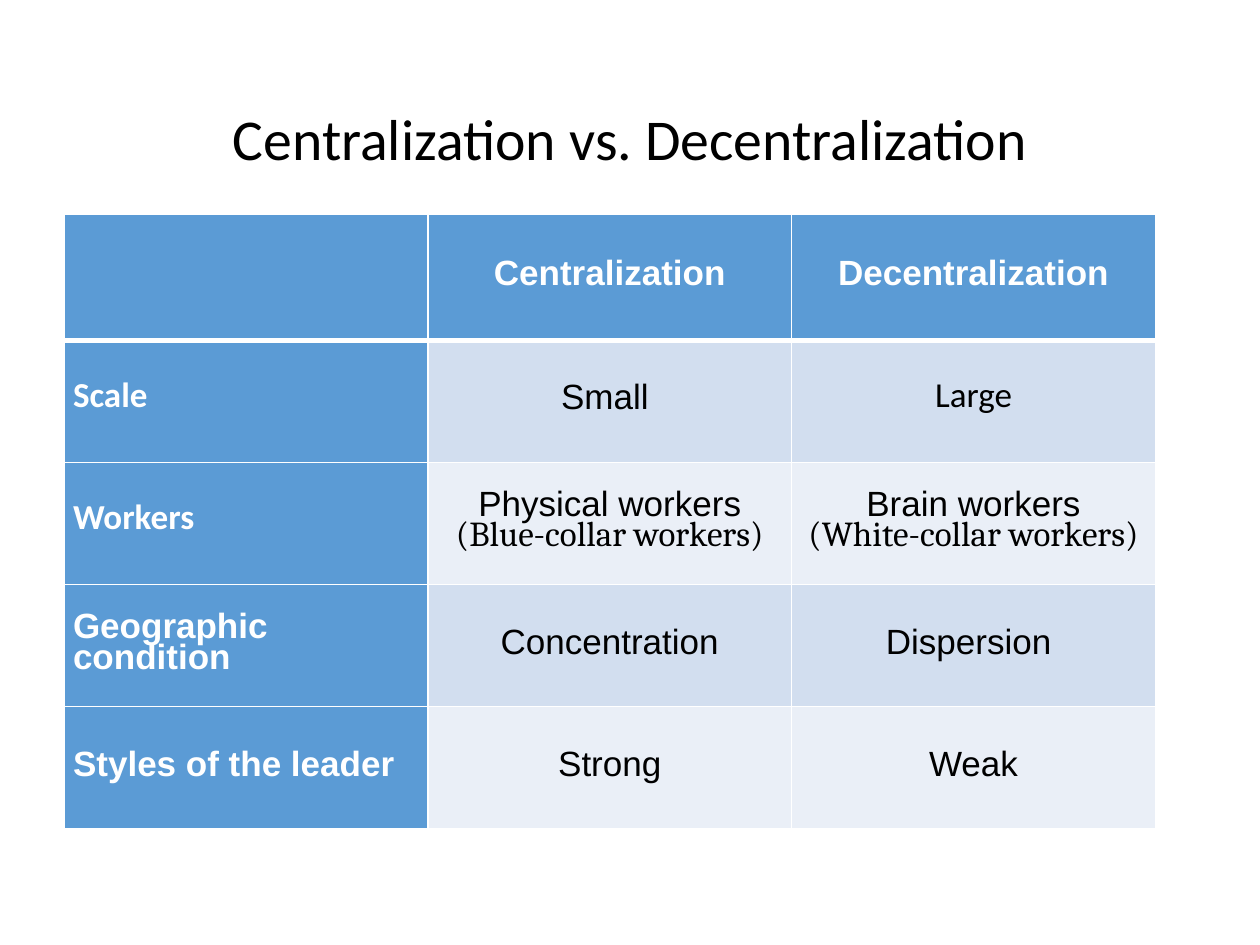
"""Build a slide that compares centralization with decentralization in a table."""
from dataclasses import dataclass

from lxml import etree
from pptx import Presentation
from pptx import util as u
from pptx.dml.color import RGBColor
from pptx.enum import text
from pptx.oxml import ns


@dataclass(frozen=True)
class Theme:
    """Colours, fonts and type sizes of the slide."""
    accent: str = "5B9BD5"
    bands: tuple = ("D2DEEF", "EAEFF7")
    light: str = "FFFFFF"
    dark: str = "000000"
    sans: str = "Arial"
    body: str = "Calibri"
    serif: str = "Cambria"
    title_size: int = 33
    cell_size: int = 20
    leading: int = 18
    rule: int = 1
    heavy_rule: int = 3


T = Theme()

ROWS = [
    [[], [("Centralization", T.sans)], [("Decentralization", T.sans)]],
    [[("Scale", T.body)], [("Small ", T.sans)], [("Large", T.body)]],
    [[("Workers", T.body)],
     [("Physical workers", T.sans), ("(Blue-collar workers)", T.serif)],
     [("Brain workers", T.sans), ("(White-collar workers)", T.serif)]],
    [[("Geographic condition", T.sans)], [("Concentration", T.sans)], [("Dispersion ", T.sans)]],
    [[("Styles of the leader", T.sans)], [("Strong", T.sans)], [("Weak", T.sans)]],
]


def add_run(p, words, font, size, color, bold=False):
    """Add one formatted run to a paragraph."""
    r = p.add_run()
    r.text = words
    r.font.name, r.font.size, r.font.bold = font, u.Pt(size), bold
    r.font.color.rgb = RGBColor.from_string(color)


def set_title(s, words):
    """Place and fill the title placeholder."""
    sp = s.shapes.title
    sp.left, sp.top, sp.width, sp.height = map(u.Inches, (0.69, 0.4, 8.62, 1.45))
    tf = sp.text_frame
    tf.vertical_anchor = text.MSO_ANCHOR.MIDDLE
    p = tf.paragraphs[0]
    p.alignment, p.line_spacing = text.PP_ALIGN.CENTER, 0.9
    add_run(p, words, T.body, T.title_size, T.dark)


def set_borders(cell, top, bottom):
    """Draw the four cell borders, with the given top and bottom widths."""
    tc_pr = cell._tc.get_or_add_tcPr()
    for side, width in (("L", T.rule), ("R", T.rule), ("T", top), ("B", bottom)):
        ln = etree.SubElement(tc_pr, ns.qn(f"a:ln{side}"), w=str(u.Pt(width)))
        fill = etree.SubElement(ln, ns.qn("a:solidFill"))
        etree.SubElement(fill, ns.qn("a:srgbClr"), val=T.light)


def fill_cell(cell, lines, row, col):
    """Format a cell by its place in the table and write its lines."""
    is_head = row == 0 or col == 0
    set_borders(cell, T.heavy_rule if row == 1 else T.rule,
                T.heavy_rule if row == 0 else T.rule)
    cell.fill.solid()
    color = T.accent if is_head else T.bands[(row - 1) % 2]
    cell.fill.fore_color.rgb = RGBColor.from_string(color)
    cell.vertical_anchor = text.MSO_ANCHOR.MIDDLE
    cell.margin_left = cell.margin_right = u.Inches(0.07)
    cell.margin_top = cell.margin_bottom = 0
    tf = cell.text_frame
    for i, (words, font) in enumerate(lines):
        p = tf.add_paragraph() if i else tf.paragraphs[0]
        p.alignment = text.PP_ALIGN.CENTER if col else text.PP_ALIGN.LEFT
        p.line_spacing = u.Pt(T.leading)
        add_run(p, words, font, T.cell_size, T.light if is_head else T.dark, is_head)


def add_comparison(s, rows):
    """Add the comparison table with equal columns and a taller header row."""
    frame = s.shapes.add_table(len(rows), len(rows[0]), u.Inches(0.51), u.Inches(1.7),
                               u.Inches(8.66), u.Inches(4.88))
    table = frame.table
    for i, lines_by_col in enumerate(rows):
        table.rows[i].height = u.Inches(0.97 if i else 1)
        for j, lines in enumerate(lines_by_col):
            fill_cell(table.cell(i, j), lines, i, j)


def main():
    """Build and save the slide."""
    prs = Presentation()
    prs.slide_width, prs.slide_height = u.Inches(10), u.Inches(7.5)
    s = prs.slides.add_slide(prs.slide_layouts.get_by_name("Title Only"))
    set_title(s, "Centralization vs. Decentralization")
    add_comparison(s, ROWS)
    prs.save("out.pptx")


if __name__ == "__main__":
    main()
